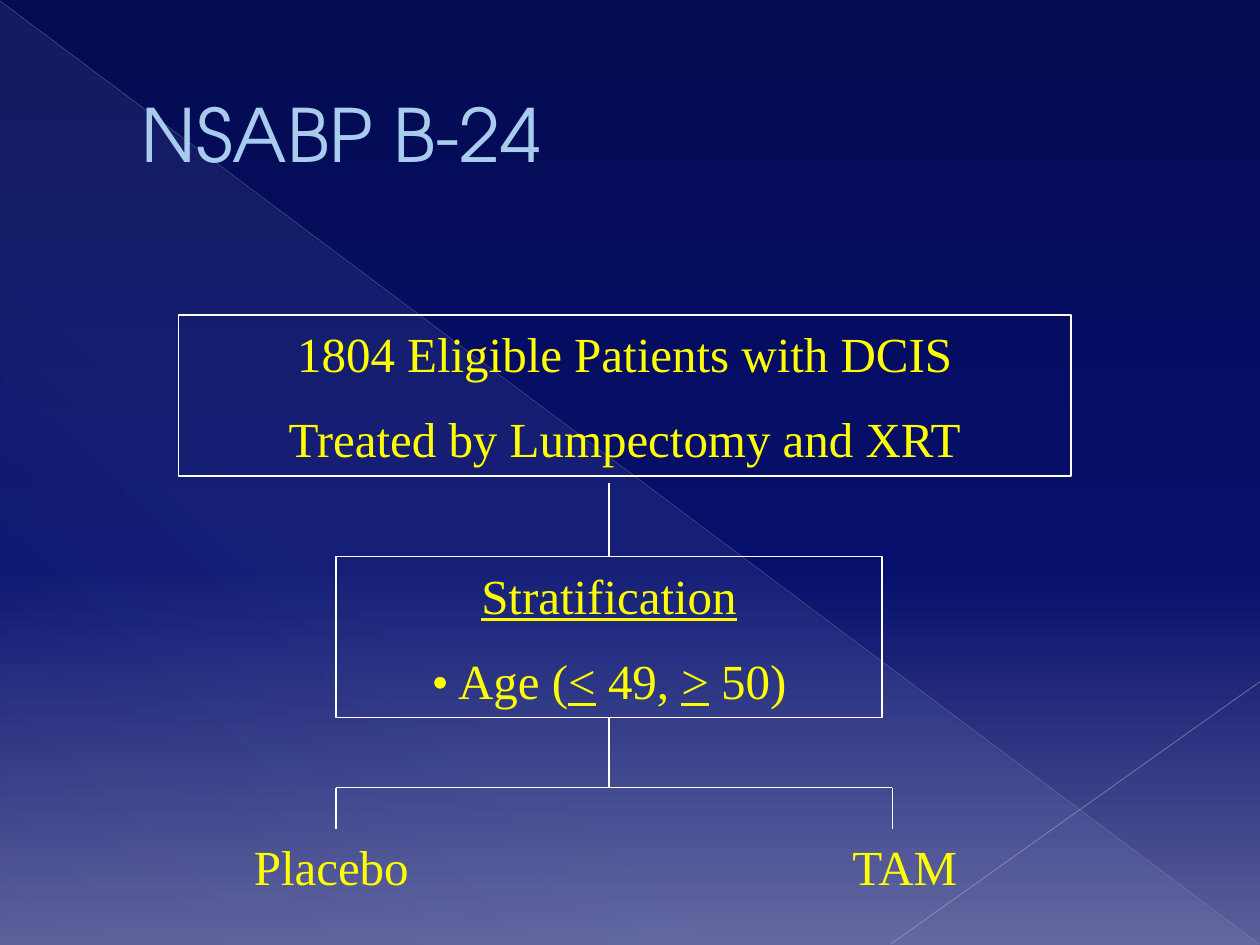
from pptx import Presentation
from pptx.dml.color import RGBColor
from pptx.enum.shapes import MSO_CONNECTOR as Connector, MSO_SHAPE as Shape
from pptx.enum.text import MSO_ANCHOR as Anchor, PP_ALIGN as Align
from pptx.oxml.ns import qn
from pptx.util import Pt
from lxml.etree import SubElement

WHITE = "FFFFFF"
BODY = {"name": "Times New Roman", "size": Pt(28), "color": "FFFF00"}
TITLE = {"name": "TeX Gyre Adventor", "size": Pt(42), "color": "A9CCEE"}
TOP, BOTTOM = 0, 2


def paint(color, value):
    color.rgb = RGBColor.from_string(value)


def set_alpha(color_element, percent):
    SubElement(color_element, qn("a:alpha")).set("val", str(percent * 1000))


def fill_gradient(fill, element, stops, angle):
    fill.gradient()
    gradient = element.find(".//" + qn("a:gradFill"))
    stop_list = gradient.find(qn("a:gsLst"))
    for stop in list(stop_list):
        stop_list.remove(stop)
    for position, value, opacity in stops:
        stop = SubElement(stop_list, qn("a:gs"), pos=str(position * 1000))
        color = SubElement(stop, qn("a:srgbClr"), val=value)
        if opacity < 100:
            set_alpha(color, opacity)
    gradient.find(qn("a:lin")).set("ang", str(angle * 60000))


def add_text(box, paragraphs, style, align=Align.LEFT, anchor=Anchor.MIDDLE):
    frame = box.text_frame
    frame.word_wrap = True
    frame.vertical_anchor = anchor
    for index, spans in enumerate(paragraphs):
        para = frame.add_paragraph() if index else frame.paragraphs[0]
        para.alignment = align
        para.space_before = Pt(15 if index else 0)
        for text, underline in spans:
            span = para.add_run()
            span.text = text
            for key, value in style.items():
                if key == "color":
                    paint(span.font.color, value)
                else:
                    setattr(span.font, key, value)
            if underline:
                span.font.underline = True


def add_label(page, area, text, style, anchor):
    box = page.shapes.add_textbox(*map(Pt, area))
    add_text(box, [[(text, False)]], style, anchor=anchor)
    return box


def add_box(page, area, paragraphs):
    box = page.shapes.add_shape(Shape.RECTANGLE, *map(Pt, area))
    box.shadow.inherit = False
    box.fill.background()
    box.line.width = Pt(0.75)
    paint(box.line.color, WHITE)
    add_text(box, paragraphs, BODY, Align.CENTER)
    return box


def add_line(page, start, end, color=WHITE, width=0.75, opacity=100):
    line = page.shapes.add_connector(Connector.STRAIGHT, *map(Pt, start + end))
    line.line.width = Pt(width)
    paint(line.line.color, color)
    if opacity < 100:
        set_alpha(line.element.spPr.find(".//" + qn("a:srgbClr")), opacity)
    SubElement(line.element.spPr, qn("a:effectLst"))
    return line


def add_backdrop(page):
    stops = [(0, "040B51", 100), (60, "060F6C", 100), (100, "5C5F99", 100)]
    fill_gradient(page.background.fill, page.element, stops, 90)
    triangle = page.shapes.add_shape(
        Shape.RIGHT_TRIANGLE, Pt(0.5), Pt(1), Pt(719), Pt(539))
    triangle.shadow.inherit = False
    triangle.line.fill.background()
    stops = [(0, "ACCBF9", 10), (70, "ACCBF9", 8), (100, "ACCBF9", 1)]
    fill_gradient(triangle.fill, triangle.element, stops, 133)
    add_line(page, (0, 0.5), (719.5, 539.5), "B2B3BE", 0.39, 35)
    add_line(page, (720, 389.5), (509, 539.5), "BBBCC5", 0.47, 45)


def add_title(page, text):
    box = add_label(page, (36, 21, 648, 110), text, TITLE, Anchor.MIDDLE)
    para = box.text_frame.paragraphs[0]
    para._p.get_or_add_pPr().set("marL", str(Pt(38)))
    properties = para.runs[0].font._element
    outline = SubElement(properties, qn("a:ln"), w=str(Pt(0.5)))
    fill = SubElement(outline, qn("a:solidFill"))
    SubElement(fill, qn("a:srgbClr"), val="446D91")
    properties.insert(0, outline)


def main():
    deck = Presentation()
    deck.slide_width, deck.slide_height = Pt(720), Pt(540)
    page = deck.slides.add_slide(deck.slide_layouts[6])
    add_backdrop(page)
    add_title(page, "NSABP B-24")

    add_box(page, (102, 180, 510, 92), [
        [("1804 Eligible Patients with DCIS", False)],
        [("Treated by Lumpectomy and XRT", False)],
    ])
    strata = add_box(page, (192, 318, 312, 92), [
        [("Stratification", True)],
        [("• Age (", False), ("<", True), (" 49, ", False), (">", True),
         (" 50)", False)],
    ])

    center, left, right, fork, arm_top = 348, 192, 510, 450, 474
    add_line(page, (left, fork), (right, fork))
    for x in (left, right):
        add_line(page, (x, fork), (x, arm_top))
    add_line(page, (center, 276), (center, 318)).end_connect(strata, TOP)
    add_line(page, (center, 410), (center, fork)).begin_connect(strata, BOTTOM)

    for text, x, width in (("Placebo", 138, 144), ("TAM", 480, 120)):
        add_label(page, (x, arm_top, width, 41), text, BODY, Anchor.BOTTOM)

    deck.save("out.pptx")


if __name__ == "__main__":
    main()
